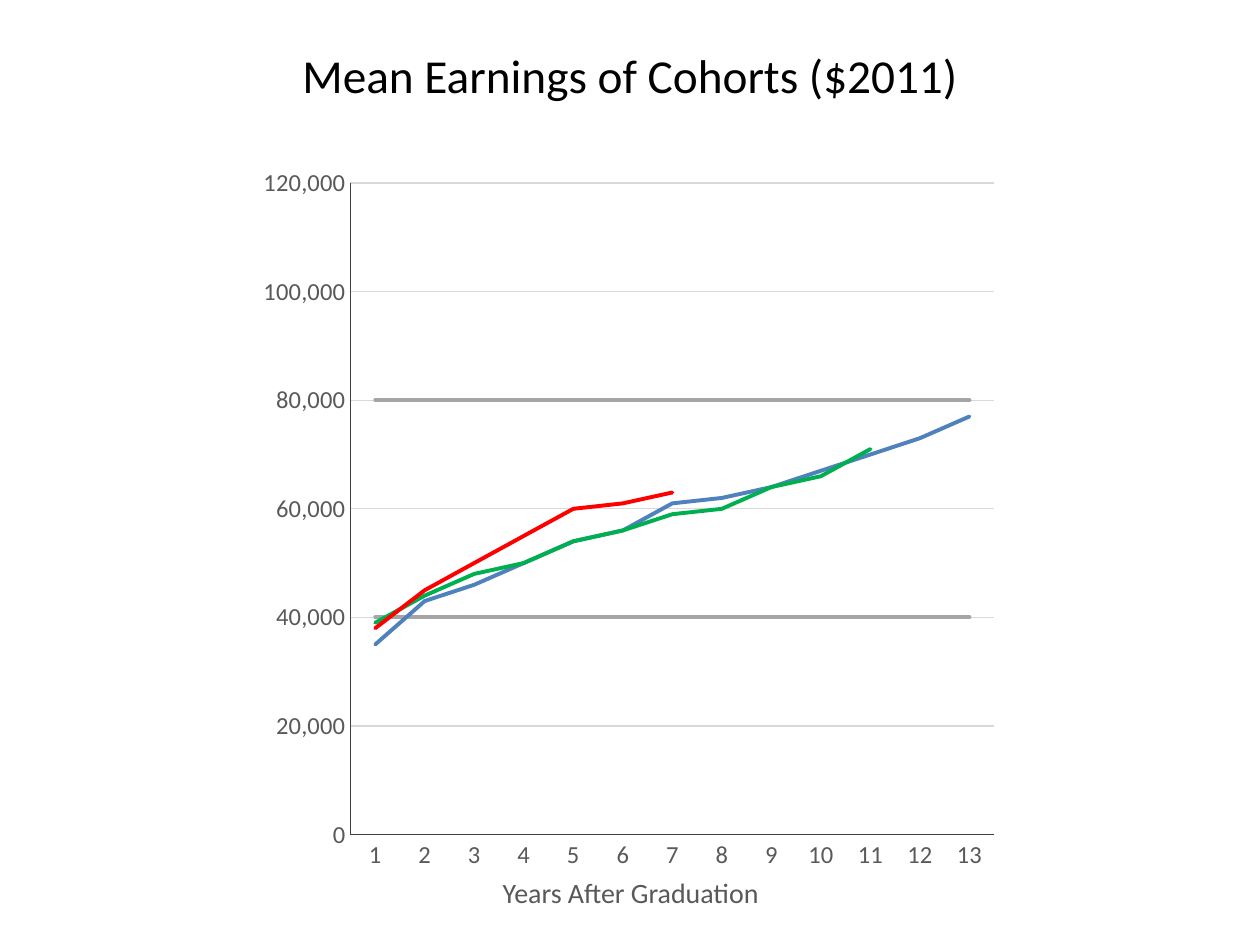
from dataclasses import dataclass

from lxml import etree
from pptx import Presentation
from pptx.chart.data import CategoryChartData
from pptx.dml.color import RGBColor
from pptx.enum.chart import XL_CHART_TYPE as ChartType, XL_TICK_MARK as TickMark
from pptx.enum.text import MSO_ANCHOR as Anchor, MSO_AUTO_SIZE as AutoSize, PP_ALIGN as Align
from pptx.oxml.ns import qn
from pptx.slide import Slide
from pptx.util import Cm, Pt

BLACK = RGBColor(0x00, 0x00, 0x00)
LABEL_GREY = RGBColor(0x59, 0x59, 0x59)
AXIS_GREY = RGBColor(0x40, 0x40, 0x40)
GRID_GREY = RGBColor(0xD9, 0xD9, 0xD9)
REFERENCE_GREY = RGBColor(0xA5, 0xA5, 0xA5)
BLUE = RGBColor(0x4F, 0x81, 0xBD)
GREEN = RGBColor(0x00, 0xB0, 0x50)
RED = RGBColor(0xFF, 0x00, 0x00)

YEARS = range(1, 14)
EARNINGS = [
    ([40000] * len(YEARS), REFERENCE_GREY),
    ([80000] * len(YEARS), REFERENCE_GREY),
    ([35000, 43000, 46000, 50000, 54000, 56000, 61000,
      62000, 64000, 67000, 70000, 73000, 77000], BLUE),
    ([39000, 44000, 48000, 50000, 54000, 56000, 59000,
      60000, 64000, 66000, 71000], GREEN),
    ([38000, 45000, 50000, 55000, 60000, 61000, 63000], RED),
]
PLOT_AREA = {"x": 0.13, "y": 0.04, "w": 0.85, "h": 0.89}


def format_font(font, name, size, color):
    font.name, font.size, font.bold = name, Pt(size), False
    font.color.rgb = color


def write_text(frame, text, *, font, size, color, align=Align.CENTER,
               anchor=Anchor.TOP, spacing=None, wrap=True, fit=AutoSize.NONE):
    frame.word_wrap = wrap
    frame.auto_size = fit
    frame.vertical_anchor = anchor
    paragraph = frame.paragraphs[0]
    paragraph.alignment = align
    paragraph.line_spacing = spacing
    run = paragraph.add_run()
    run.text = text
    format_font(run.font, font, size, color)


def format_line(line, color, width):
    line.color.rgb = color
    line.width = Pt(width)


def place_plot(chart, fractions):
    plot_area = chart.element.find(".//" + qn("c:plotArea"))
    for old_layout in plot_area.findall(qn("c:layout")):
        plot_area.remove(old_layout)
    layout = etree.Element(qn("c:layout"))
    manual = etree.SubElement(layout, qn("c:manualLayout"))
    settings = {"layoutTarget": "inner", "xMode": "edge", "yMode": "edge", **fractions}
    for tag, value in settings.items():
        etree.SubElement(manual, qn(f"c:{tag}")).set("val", str(value))
    plot_area.insert(0, layout)


@dataclass
class EarningsSlide:
    slide: Slide
    font: str = "Calibri"
    title_size: int = 27
    caption_size: int = 16
    tick_size: int = 14
    axis_width: float = 0.75
    series_width: float = 2.25

    def title(self, text, left, top, width, height):
        heading = self.slide.shapes.title
        heading.left, heading.top = Cm(left), Cm(top)
        heading.width, heading.height = Cm(width), Cm(height)
        write_text(heading.text_frame, text, font=self.font, size=self.title_size,
                   color=BLACK, anchor=Anchor.MIDDLE, spacing=0.9)

    def caption(self, text, left, top, width, height):
        caption = self.slide.shapes.add_textbox(Cm(left), Cm(top), Cm(width), Cm(height))
        write_text(caption.text_frame, text, font=self.font, size=self.caption_size,
                   color=LABEL_GREY, wrap=False, fit=AutoSize.SHAPE_TO_FIT_TEXT)

    def format_axis(self, axis):
        axis.major_tick_mark = axis.minor_tick_mark = TickMark.NONE
        format_line(axis.format.line, AXIS_GREY, self.axis_width)
        format_font(axis.tick_labels.font, self.font, self.tick_size, LABEL_GREY)

    def line_chart(self, categories, cohorts, left, top, width, height):
        earnings = CategoryChartData(number_format="#,##0")
        earnings.categories = [str(category) for category in categories]
        for number, (values, _) in enumerate(cohorts, 1):
            earnings.add_series(f"Series {number}", values)
        chart = self.slide.shapes.add_chart(
            ChartType.LINE, Cm(left), Cm(top), Cm(width), Cm(height), earnings).chart
        format_font(chart.font, self.font, 10, BLACK)
        chart.has_legend = False
        chart.has_title = False
        place_plot(chart, PLOT_AREA)

        plot = chart.plots[0]
        plot.vary_by_categories = False
        for series, (_, color) in zip(plot.series, cohorts):
            series.smooth = False
            format_line(series.format.line, color, self.series_width)
        for stroke in chart.element.iterfind(f".//{qn('c:ser')}/{qn('c:spPr')}/{qn('a:ln')}"):
            stroke.set("cap", "rnd")

        self.format_axis(chart.category_axis)
        scale = chart.value_axis
        self.format_axis(scale)
        scale.minimum_scale, scale.maximum_scale, scale.major_unit = 0, 120000, 20000
        scale.tick_labels.number_format = "#,##0"
        scale.tick_labels.number_format_is_linked = False
        scale.has_major_gridlines = True
        format_line(scale.major_gridlines.format.line, GRID_GREY, self.axis_width)


def main():
    deck = Presentation()
    deck.slide_width, deck.slide_height = Cm(25.4), Cm(19.05)
    page = EarningsSlide(deck.slides.add_slide(deck.slide_layouts[5]))
    page.title("Mean Earnings of Cohorts ($2011)", 1.75, 0.86, 21.9, 1.45)
    page.line_chart(YEARS, EARNINGS, 5.08, 3.1, 15.27, 14.76)
    page.caption("Years After Graduation", 9.83, 17.53, 5.77, 0.94)
    deck.save("out.pptx")


if __name__ == "__main__":
    main()
